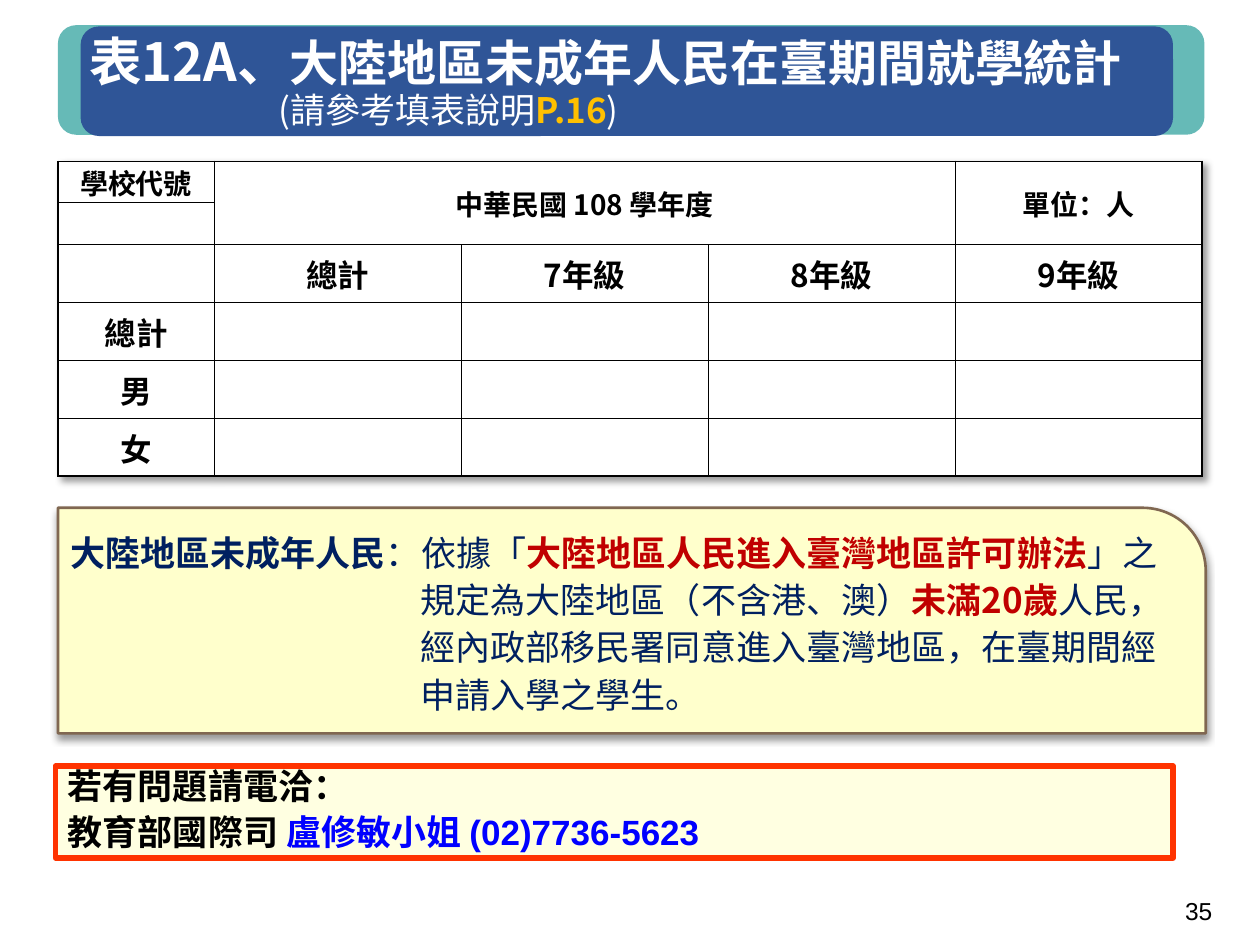
from typing import NamedTuple, Optional

from lxml.etree import SubElement
from pptx import Presentation
from pptx.dml.color import RGBColor
from pptx.enum.shapes import MSO_SHAPE as Shape
from pptx.enum.text import MSO_ANCHOR as Anchor, PP_ALIGN as Align
from pptx.oxml import parse_xml
from pptx.oxml.ns import nsdecls, qn
from pptx.util import Emu, Inches, Pt

COLORS = {
    "white": "FFFFFF", "black": "000000", "teal": "66BAB7", "blue": "2F5597",
    "gold": "FFC000", "cream": "FFFFCC", "brown": "806751", "navy": "002060",
    "red": "C00000", "ivory": "FFFFE1", "orange": "FF3300", "link": "0000FF",
}
CJK = "Noto Sans CJK SC"


class Span(NamedTuple):
    text: str
    color: Optional[str] = None
    bold: Optional[bool] = None
    size: Optional[float] = None


class Line(NamedTuple):
    spans: list[Span]
    left: float = 0
    indent: float = 0
    before: float = 0


class Style(NamedTuple):
    size: float
    color: str
    bold: bool = False
    font: str = CJK
    spacing: Optional[float] = None
    align: Align = Align.LEFT


def rgb(name: str) -> RGBColor:
    return RGBColor.from_string(COLORS[name])


def set_font(font, size=None, color=None, bold=None) -> None:
    if size:
        font.size = Pt(size)
    if color:
        font.color.rgb = rgb(color)
    if bold is not None:
        font.bold = bold


def write(frame, lines: list[Line], style: Style) -> None:
    """Fill a text frame; spans override the paragraph style."""
    for number, line in enumerate(lines):
        para = frame.add_paragraph() if number else frame.paragraphs[0]
        para.alignment = style.align
        if style.spacing:
            para.line_spacing = Pt(style.spacing)
        if line.before:
            para.space_before = Pt(line.before)
        if line.left:
            properties = para._p.get_or_add_pPr()
            properties.set("marL", str(Inches(line.left)))
            properties.set("indent", str(Inches(line.indent)))
        set_font(para.font, style.size, style.color, style.bold)
        para.font.name = style.font
        east_asian = SubElement(para.font._element, qn("a:ea"))
        east_asian.set("typeface", CJK)
        for span in line.spans:
            run = para.add_run()
            run.text = span.text
            set_font(run.font, span.size, span.color or style.color, span.bold)


def set_frame(box, inset_x: float, inset_y: float):
    frame = box.text_frame
    frame.word_wrap = True
    frame.vertical_anchor = Anchor.MIDDLE
    frame.margin_left = frame.margin_right = Inches(inset_x)
    frame.margin_top = frame.margin_bottom = Inches(inset_y)
    return frame


def add_box(page, kind, area, fill, line=None, width=0.0):
    box = page.shapes.add_shape(kind, *map(Inches, area))
    box.shadow.inherit = False
    box.fill.solid()
    box.fill.fore_color.rgb = rgb(fill)
    if line:
        box.line.color.rgb = rgb(line)
        box.line.width = Pt(width)
    else:
        box.line.fill.background()
    return box


def shadow_effect(angle: int):
    return parse_xml(
        f'<a:effectLst {nsdecls("a")}><a:outerShdw blurRad="{Pt(4)}" dist="{Pt(3)}" '
        f'dir="{angle * 60000}" algn="tl" rotWithShape="0"><a:srgbClr val="{COLORS["black"]}">'
        '<a:alpha val="40000"/></a:srgbClr></a:outerShdw></a:effectLst>')


def set_borders(cell, widths: dict[str, float]) -> None:
    properties = cell._tc.get_or_add_tcPr()
    for index, (side, width) in enumerate(widths.items()):
        properties.insert(index, parse_xml(
            f'<a:ln{side} {nsdecls("a")} w="{Pt(width)}"><a:solidFill>'
            f'<a:srgbClr val="{COLORS["black"]}"/></a:solidFill></a:ln{side}>'))


def add_banner(page) -> None:
    for area, fill in (((0.46, 0.2, 9.1, 0.87), "teal"), ((0.64, 0.21, 8.67, 0.87), "blue")):
        add_box(page, Shape.ROUNDED_RECTANGLE, area, fill)
    title = page.shapes.add_textbox(*map(Inches, (0.64, 0.26, 8.66, 0.94)))
    write(set_frame(title, 0.07, 0.04), [
        Line([Span("表12A、", bold=True, size=30),
              Span("大陸地區未成年人民在臺期間就學統計", bold=True, size=28)]),
        Line([Span("(請參考填表說明"), Span("P.16", "gold", True), Span(")")], left=1.5),
    ], Style(20, "white", spacing=22))


def add_statistics(page) -> None:
    columns = [1.24] + [1.96] * 4
    rows = [0.33] * 2 + [0.46] * 4
    labels = {
        (0, 0): "學校代號", (0, 1): "中華民國 108 學年度", (0, 4): "單位：人",
        (2, 1): "總計", (2, 2): "7年級", (2, 3): "8年級", (2, 4): "9年級",
        (3, 0): "總計", (4, 0): "男", (5, 0): "女",
    }
    table = page.shapes.add_table(
        len(rows), len(columns), Inches(0.46), Inches(1.28),
        Inches(sum(columns)), Inches(sum(rows))).table
    table.first_row = table.horz_banding = False
    table._tbl.tblPr.insert(0, shadow_effect(45))
    for column, width in zip(table.columns, columns):
        column.width = Inches(width)
    for row, height in zip(table.rows, rows):
        row.height = Inches(height)

    last_row, last_column = len(rows) - 1, len(columns) - 1
    for r in range(len(rows)):
        for c in range(len(columns)):
            cell = table.cell(r, c)
            cell.fill.solid()
            cell.fill.fore_color.rgb = rgb("white")
            cell.vertical_anchor = Anchor.MIDDLE
            cell.margin_left = cell.margin_right = cell.margin_top = Inches(0.01)
            cell.margin_bottom = Emu(0)
            outer = {"L": c == 0, "R": c == last_column, "T": r == 0, "B": r == last_row}
            set_borders(cell, {side: 1 if edge else 0.5 for side, edge in outer.items()})
            text = labels.get((r, c))
            write(cell.text_frame, [Line([Span(text)] if text else [])],
                  Style(16 if r < 2 else 18, "black", True, align=Align.CENTER))
    table.cell(0, 1).merge(table.cell(1, 3))
    table.cell(0, 4).merge(table.cell(1, 4))


def add_definition(page) -> None:
    box = add_box(page, Shape.ROUND_1_RECTANGLE, (0.46, 4.03, 9.11, 1.79),
                  "cream", "brown", 1.5)
    box.adjustments[0] = 0.28
    box._element.spPr.remove(box._element.spPr.find(qn("a:effectLst")))
    box._element.spPr.append(shadow_effect(90))
    hang = 2.78  # ten characters of 20 points
    write(set_frame(box, 0.1, 0.1), [
        Line([Span("大陸地區未成年人民", bold=True), Span("：依據「"),
              Span("大陸地區人民進入臺灣地區許可辦法", "red", True), Span("」之")], hang, -hang),
        Line([Span("規定為大陸地區（不含港、澳）"), Span("未滿20歲", "red", True),
              Span("人民，")], hang),
        Line([Span("經內政部移民署同意進入臺灣地區，在臺期間經")], hang),
        Line([Span("申請入學之學生。")], hang),
    ], Style(20, "navy", spacing=27))


def add_contact(page) -> None:
    box = add_box(page, Shape.RECTANGLE, (0.44, 6.08, 8.87, 0.73), "ivory", "orange", 3)
    write(set_frame(box, 0.1, 0.05), [
        Line([Span("若有問題請電洽：")]),
        Line([Span("教育部國際司 "), Span("盧修敏小姐 (02)7736-5623", "link")], before=6),
    ], Style(20, "black", True, "Arial", 20))


def add_page_number(page) -> None:
    box = page.shapes.add_textbox(*map(Inches, (7.47, 7.03, 2.25, 0.4)))
    write(set_frame(box, 0.1, 0.05), [Line([Span("35")])],
          Style(14, "black", font="Arial", align=Align.RIGHT))


def main() -> None:
    deck = Presentation()
    deck.slide_width, deck.slide_height = Inches(10), Inches(7.5)
    page = deck.slides.add_slide(deck.slide_layouts[6])
    add_banner(page)
    add_statistics(page)
    add_definition(page)
    add_page_number(page)
    add_contact(page)
    deck.save("out.pptx")


if __name__ == "__main__":
    main()
